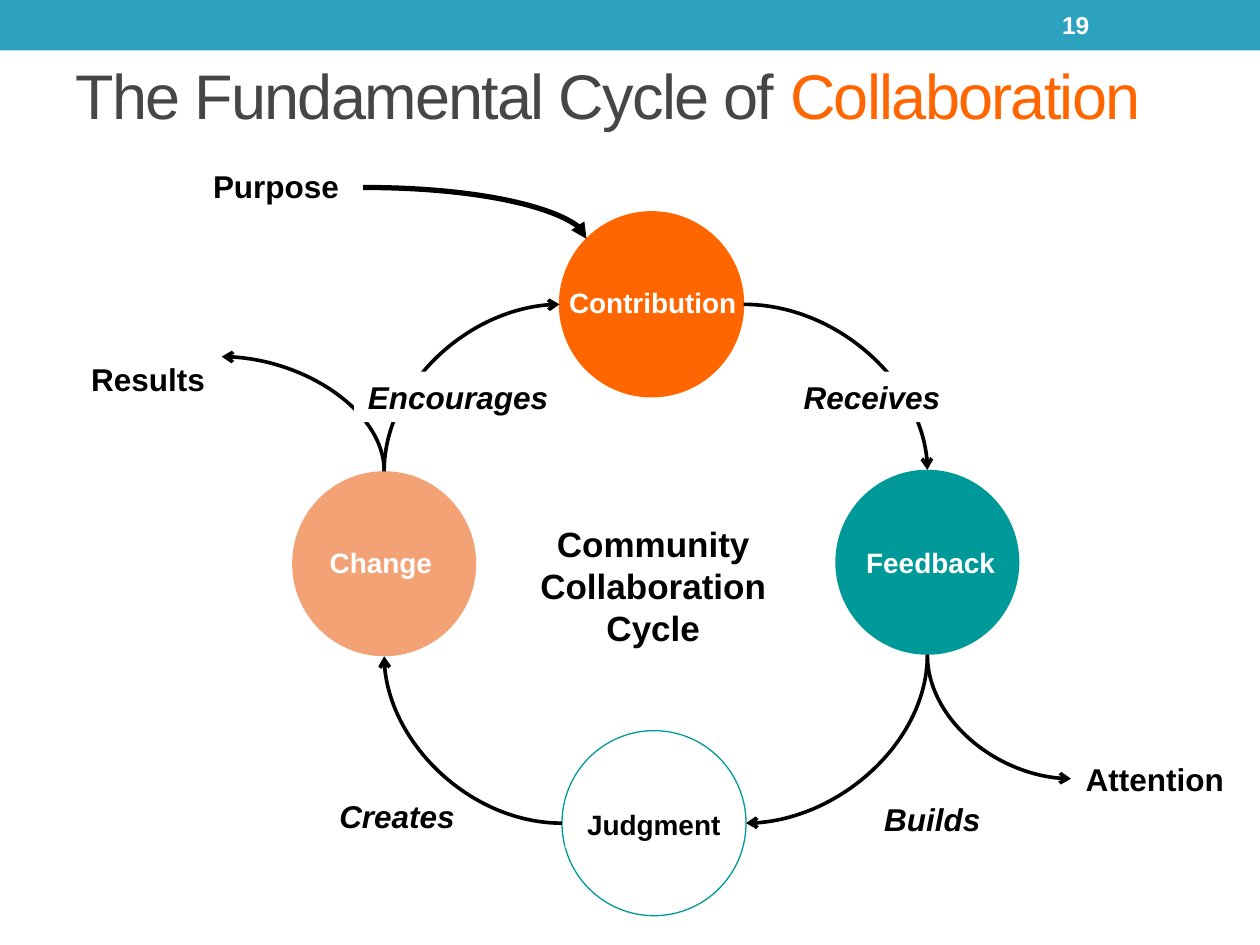
from math import cos, radians, sin

from lxml.etree import SubElement
from pptx import Presentation
from pptx.dml.color import RGBColor
from pptx.enum.shapes import MSO_CONNECTOR as Conn, MSO_SHAPE as Preset
from pptx.enum.text import MSO_ANCHOR as Anchor, MSO_AUTO_SIZE as AutoSize, PP_ALIGN as Align
from pptx.oxml.ns import qn
from pptx.util import Cm, Pt

COLORS = {
    "bar": "2DA2BF", "title": "464646", "orange": "FF6600", "peach": "F3A276",
    "teal": "009999", "white": "FFFFFF", "black": "000000",
}
CIRCLE_W, CIRCLE_H = 3.71, 3.73
TOP, TOP_LEFT, LEFT, BOTTOM, RIGHT = 0, 1, 2, 4, 6


def color(name):
    return RGBColor.from_string(COLORS[name])


class CycleSlide:
    font = "Arial"

    def __init__(self, prs):
        self.slide = prs.slides.add_slide(prs.slide_layouts[5])
        self.shapes = self.slide.shapes

    def style(self, p, size, fill, bold=True, italic=False):
        p.font.name, p.font.size = self.font, Pt(size)
        p.font.bold, p.font.italic = bold, italic
        p.font.color.rgb = color(fill)

    def title(self, plain, accent, box):
        sp = self.shapes.title
        sp.left, sp.top, sp.width, sp.height = map(Cm, box)
        tf = sp.text_frame
        tf.auto_size, tf.vertical_anchor = AutoSize.NONE, Anchor.MIDDLE
        p = tf.paragraphs[0]
        p.alignment = Align.LEFT
        self.style(p, 36, "title", bold=False)
        for text, fill in ((plain, "title"), (accent, "orange")):
            r = p.add_run()
            r.text = text
            r.font.color.rgb = color(fill)
            r.font._element.set("spc", "-100")

    def shape(self, preset, box, fill, line=None):
        sp = self.shapes.add_shape(preset, *map(Cm, box))
        sp.shadow.inherit = False
        sp.fill.solid()
        sp.fill.fore_color.rgb = color(fill)
        if line:
            sp.line.color.rgb = color(line)
            sp.line.width = Pt(0.75)
        else:
            sp.line.fill.background()
        return sp

    def circle(self, x, y, fill, line=None):
        return self.shape(Preset.OVAL, (x, y, CIRCLE_W, CIRCLE_H), fill, line)

    def label(self, text, box, size=18, ink="black", fill=None, italic=False,
              align=Align.CENTER, anchor=Anchor.TOP):
        sp = self.shapes.add_textbox(*map(Cm, box))
        if fill:
            sp.fill.solid()
            sp.fill.fore_color.rgb = color(fill)
        tf = sp.text_frame
        tf.word_wrap, tf.vertical_anchor = True, anchor
        p = tf.paragraphs[0]
        p.text, p.alignment = text, align
        self.style(p, size, ink, italic=italic)

    def site(self, sp, index):
        angle = radians(90 + 45 * index)
        return (int(sp.left + sp.width / 2 * (1 + cos(angle))),
                int(sp.top + sp.height / 2 * (1 - sin(angle))))

    def curve(self, level_end, upright_end, arrow_at, kind="arrow", width=2.08):
        ends = (level_end, upright_end)
        points = [tuple(map(Cm, e)) if isinstance(e[0], float) else self.site(*e)
                  for e in ends]
        cxn = self.shapes.add_connector(Conn.CURVE, *points[0], *points[1])
        cxn.line.color.rgb = color("black")
        cxn.line.width = Pt(width)
        sppr = cxn._element.spPr
        sppr.find(qn("a:prstGeom")).set("prst", "curvedConnector2")
        SubElement(sppr.find(qn("a:ln")), qn(f"a:{arrow_at}End"), type=kind)
        SubElement(sppr, qn("a:effectLst"))
        links = cxn._element.find(".//" + qn("p:cNvCxnSpPr"))
        for tag, end in zip(("a:stCxn", "a:endCxn"), ends):
            if not isinstance(end[0], float):
                SubElement(links, qn(tag), id=str(end[0].shape_id), idx=str(end[1]))


def main():
    prs = Presentation()
    prs.slide_width, prs.slide_height = Cm(25.4), Cm(19.05)
    s = CycleSlide(prs)

    s.shape(Preset.RECTANGLE, (0, 0, 25.4, 1.02), "bar")
    s.title("The Fundamental Cycle of ", "Collaboration", (1.27, 1.04, 24.13, 1.73))
    s.label("19", (21.16, 0.05, 2.97, 0.91), 14, "white",
            align=Align.LEFT, anchor=Anchor.MIDDLE)

    change = s.circle(5.89, 9.5, "peach")
    contribution = s.circle(11.28, 4.27, "orange", "orange")
    feedback = s.circle(16.84, 9.47, "teal")
    judgment = s.circle(11.33, 14.73, "white", "teal")

    for text, x, y, w, ink, fill in (
        ("Change", 6.12, 10.87, 3.12, "white", "peach"),
        ("Contribution", 11.18, 5.64, 3.96, "white", None),
        ("Feedback", 17.12, 10.87, 3.28, "white", "teal"),
        ("Judgment", 11.4, 16.15, 3.56, "black", "white"),
    ):
        s.label(text, (x, y, w, 0.94), 16, ink, fill)

    s.curve((7.32, 3.78), (contribution, TOP_LEFT), "tail", "triangle", 3)
    s.curve((contribution, RIGHT), (feedback, TOP), "tail")
    s.curve((judgment, RIGHT), (feedback, BOTTOM), "head")
    s.curve((21.59, 15.7), (feedback, BOTTOM), "head")
    s.curve((judgment, LEFT), (change, BOTTOM), "tail")
    s.curve((contribution, LEFT), (change, TOP), "head")
    s.curve((4.47, 7.19), (change, TOP), "head")

    for text, x, y, w in (
        ("Purpose", 3.81, 3.25, 3.51),
        ("Attention", 21.59, 15.19, 3.38),
        ("Results", 1.12, 7.14, 3.73),
    ):
        s.label(text, (x, y, w, 1.02))
    for text, x, y, w, fill in (
        ("Receives", 15.88, 7.49, 3.4, "white"),
        ("Builds", 17.45, 16, 2.69, None),
        ("Creates", 6.2, 15.95, 3.61, None),
        ("Encourages", 7.14, 7.49, 4.19, "white"),
    ):
        s.label(text, (x, y, w, 1.02), fill=fill, italic=True)
    s.label("Community Collaboration Cycle", (10.59, 10.41, 5.16, 2.82), 20)

    prs.save("out.pptx")


if __name__ == "__main__":
    main()
